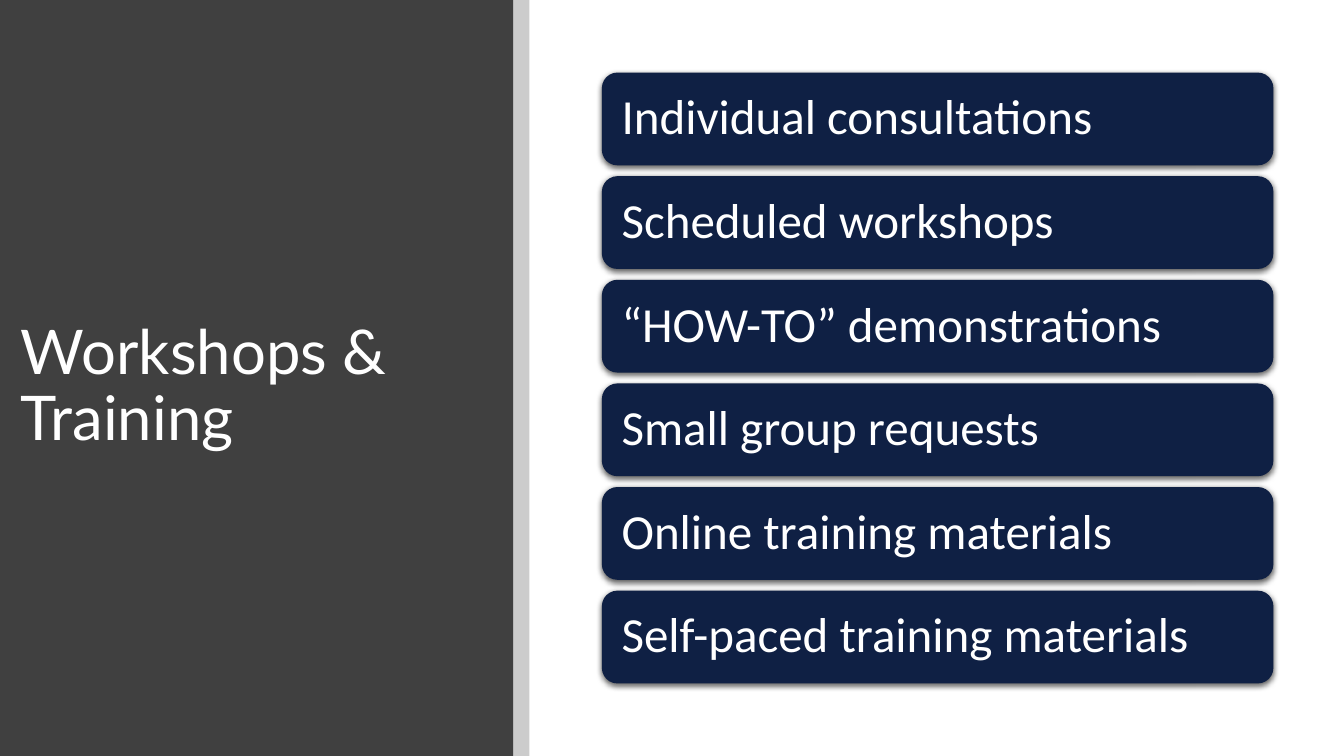
from lxml import etree
from pptx import Presentation
from pptx.dml.color import RGBColor
from pptx.enum.shapes import MSO_SHAPE
from pptx.enum.text import MSO_ANCHOR, PP_ALIGN
from pptx.oxml.ns import qn
from pptx.util import Inches, Pt

RECTANGLE = MSO_SHAPE.RECTANGLE
ROUNDED = MSO_SHAPE.ROUNDED_RECTANGLE
MIDDLE = MSO_ANCHOR.MIDDLE
LEFT = PP_ALIGN.LEFT

# Content
TITLE = "Workshops & Training"
OFFERINGS = [
    "Individual consultations",
    "Scheduled workshops",
    "“HOW-TO” demonstrations",
    "Small group requests",
    "Online training materials",
    "Self-paced training materials",
]

# Theme
THEME = {
    "panel": "404040",
    "stripe": "000000",
    "stripe_opacity": 20,
    "card": "0F2044",
    "title": {"name": "Lato", "size": Pt(44), "color": "FFFFFF"},
    "offering": {"name": "Calibri", "size": Pt(35), "color": "FFFFFF"},
    "shadow": {"color": "000000", "opacity": 63, "blur": 4.5, "distance": 1.5, "angle": 90},
}

# Layout, in inches
SLIDE_WIDTH, SLIDE_HEIGHT = 13.33, 7.5
PANEL_WIDTH, STRIPE_WIDTH = 5.09, 0.16
TITLE_BOX = (0.11, 0.89, 4.45, 5.91)
CARD_LEFT, CARD_TOP, CARD_WIDTH, CARD_HEIGHT = 5.97, 0.72, 6.66, 0.92
CARD_STEP = 1.028
TITLE_INSETS = (0.1, 0.05)
CARD_INSETS = (0.15, 0.15)


def add_alpha(color_element, percent):
    etree.SubElement(color_element, qn("a:alpha"), val=str(percent * 1000))


def add_block(slide, kind, box, fill):
    shape = slide.shapes.add_shape(kind, *map(Inches, box))
    shape.shadow.inherit = False
    shape.fill.solid()
    shape.fill.fore_color.rgb = RGBColor.from_string(fill)
    shape.line.fill.background()
    return shape


def add_drop_shadow(shape, shadow):
    effects = shape._element.spPr.find(qn("a:effectLst"))
    outer = etree.SubElement(
        effects, qn("a:outerShdw"),
        blurRad=str(Pt(shadow["blur"])), dist=str(Pt(shadow["distance"])),
        dir=str(shadow["angle"] * 60000), algn="ctr", rotWithShape="0")
    color = etree.SubElement(outer, qn("a:srgbClr"), val=shadow["color"])
    add_alpha(color, shadow["opacity"])


def write_text(shape, text, style, insets):
    frame = shape.text_frame
    across, down = map(Inches, insets)
    frame_format = {
        "word_wrap": True, "vertical_anchor": MIDDLE,
        "margin_left": across, "margin_right": across,
        "margin_top": down, "margin_bottom": down,
    }
    for name, value in frame_format.items():
        setattr(frame, name, value)
    paragraph = frame.paragraphs[0]
    paragraph.alignment = LEFT
    paragraph.line_spacing = 0.9
    run = paragraph.add_run()
    run.text = text
    for name in ("name", "size"):
        setattr(run.font, name, style[name])
    run.font.color.rgb = RGBColor.from_string(style["color"])


def main():
    presentation = Presentation()
    presentation.slide_width = Inches(SLIDE_WIDTH)
    presentation.slide_height = Inches(SLIDE_HEIGHT)
    slide = presentation.slides.add_slide(presentation.slide_layouts[6])

    # Title panel and stripe
    add_block(slide, RECTANGLE, (0, 0, PANEL_WIDTH, SLIDE_HEIGHT), THEME["panel"])
    title = slide.shapes.add_textbox(*map(Inches, TITLE_BOX))
    write_text(title, TITLE, THEME["title"], TITLE_INSETS)
    stripe = add_block(slide, RECTANGLE, (PANEL_WIDTH, 0, STRIPE_WIDTH, SLIDE_HEIGHT),
                       THEME["stripe"])
    stripe_color = stripe._element.spPr.find(qn("a:solidFill")).find(qn("a:srgbClr"))
    add_alpha(stripe_color, THEME["stripe_opacity"])

    # Offering cards
    for index, offering in enumerate(OFFERINGS):
        top = CARD_TOP + index * CARD_STEP
        card = add_block(slide, ROUNDED, (CARD_LEFT, top, CARD_WIDTH, CARD_HEIGHT),
                         THEME["card"])
        add_drop_shadow(card, THEME["shadow"])
        write_text(card, offering, THEME["offering"], CARD_INSETS)

    presentation.save("out.pptx")


if __name__ == "__main__":
    main()
